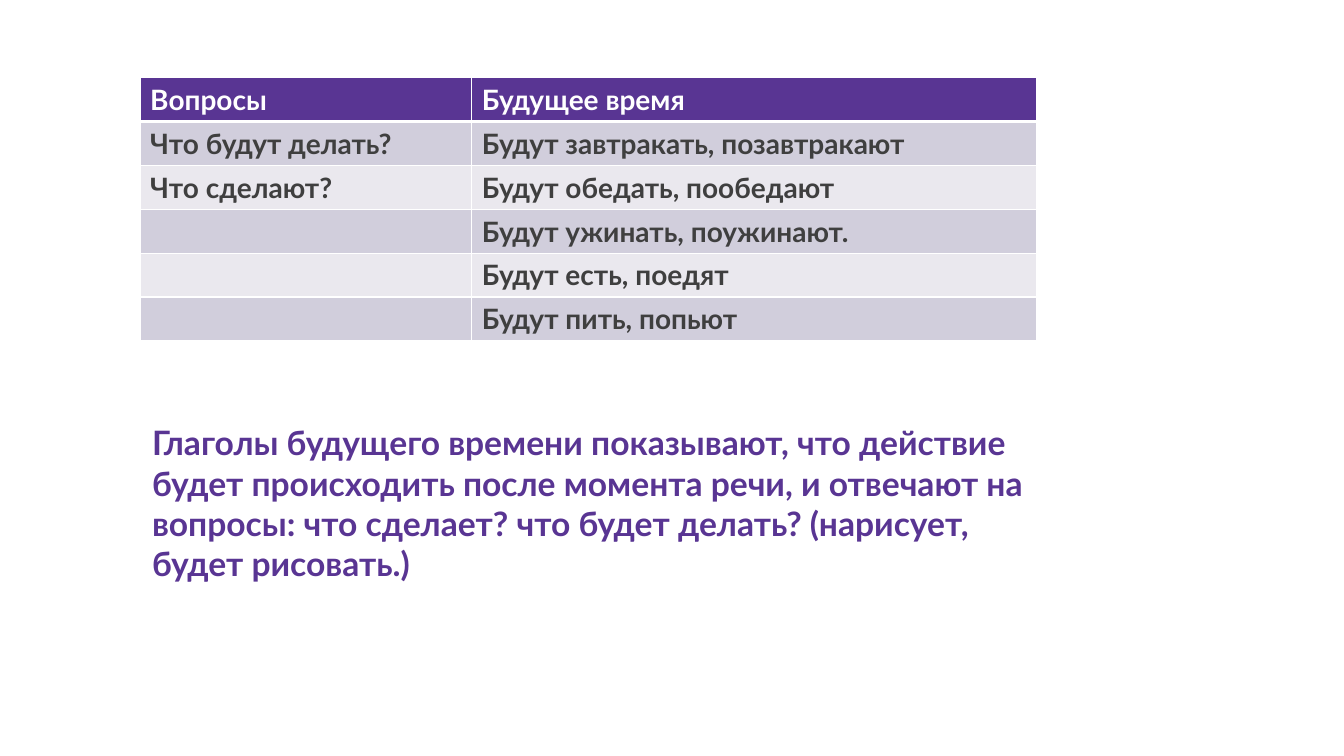
"""Build a slide on Russian future-tense verbs."""
from lxml import etree
from pptx import Presentation
from pptx import util as u
from pptx.dml.color import RGBColor
from pptx.enum import text
from pptx.oxml import ns

FONT = "Lato"
PURPLE = RGBColor(0x59, 0x35, 0x93)
LILAC = RGBColor(0xD1, 0xCE, 0xDC)
PALE = RGBColor(0xEA, 0xE8, 0xEE)
GREY = RGBColor(0x3F, 0x3F, 0x3F)
WHITE = RGBColor(0xFF, 0xFF, 0xFF)

ROWS = [
    ("Вопросы", "Будущее время"),
    ("Что будут делать?", "Будут завтракать, позавтракают"),
    ("Что сделают?", "Будут обедать, пообедают"),
    ("", "Будут ужинать, поужинают."),
    ("", "Будут есть, поедят"),
    ("", "Будут пить, попьют"),
]
WIDTHS = (3.29, 5.6)
RULE = ("Глаголы будущего времени показывают, что действие будет происходить "
        "после момента речи, и отвечают на вопросы: что сделает? что будет "
        "делать? (нарисует, будет рисовать.)")


def add_run(para, words, size, color):
    """Add one bold run to a paragraph."""
    run = para.add_run()
    run.text = words
    run.font.name = FONT
    run.font.size = u.Pt(size)
    run.font.bold = True
    run.font.color.rgb = color


def add_edge(cell, side, width):
    """Draw a white border on one side of a cell."""
    props = cell._tc.get_or_add_tcPr()
    line = etree.SubElement(props, ns.qn("a:ln" + side), w=str(u.Pt(width)))
    fill = etree.SubElement(line, ns.qn("a:solidFill"))
    etree.SubElement(fill, ns.qn("a:srgbClr"), val=str(WHITE))


def fill_cell(cell, words, row):
    """Style a table cell by its row and write its words."""
    for side in "LRTB":
        thick = (row, side) in ((0, "B"), (1, "T"))
        add_edge(cell, side, 3 if thick else 1)
    cell.fill.solid()
    cell.fill.fore_color.rgb = PURPLE if row == 0 else (PALE, LILAC)[row % 2]
    if words:
        add_run(cell.text_frame.paragraphs[0], words, 20,
                GREY if row else WHITE)


def add_grid(slide):
    """Add the table of questions and verbs."""
    table = slide.shapes.add_table(
        len(ROWS), len(WIDTHS), u.Inches(1.39), u.Inches(0.77),
        u.Inches(sum(WIDTHS)), u.Inches(2.6)).table
    for col, width in zip(table.columns, WIDTHS):
        col.width = u.Inches(width)
    for row, pair in enumerate(ROWS):
        for col, words in enumerate(pair):
            fill_cell(table.cell(row, col), words, row)


def add_rule(slide):
    """Add the grammar rule below the table."""
    box = slide.shapes.add_textbox(
        u.Inches(1.41), u.Inches(4.13), u.Inches(9.05), u.Inches(1.72))
    frame = box.text_frame
    frame.word_wrap = True
    frame.auto_size = text.MSO_AUTO_SIZE.SHAPE_TO_FIT_TEXT
    frame.vertical_anchor = text.MSO_ANCHOR.MIDDLE
    add_run(frame.paragraphs[0], RULE, 24, PURPLE)


def main():
    """Build and save the slide."""
    deck = Presentation()
    deck.slide_width = u.Inches(13.33)
    deck.slide_height = u.Inches(7.5)
    slide = deck.slides.add_slide(deck.slide_layouts[6])
    add_grid(slide)
    add_rule(slide)
    deck.save("out.pptx")


if __name__ == "__main__":
    main()
